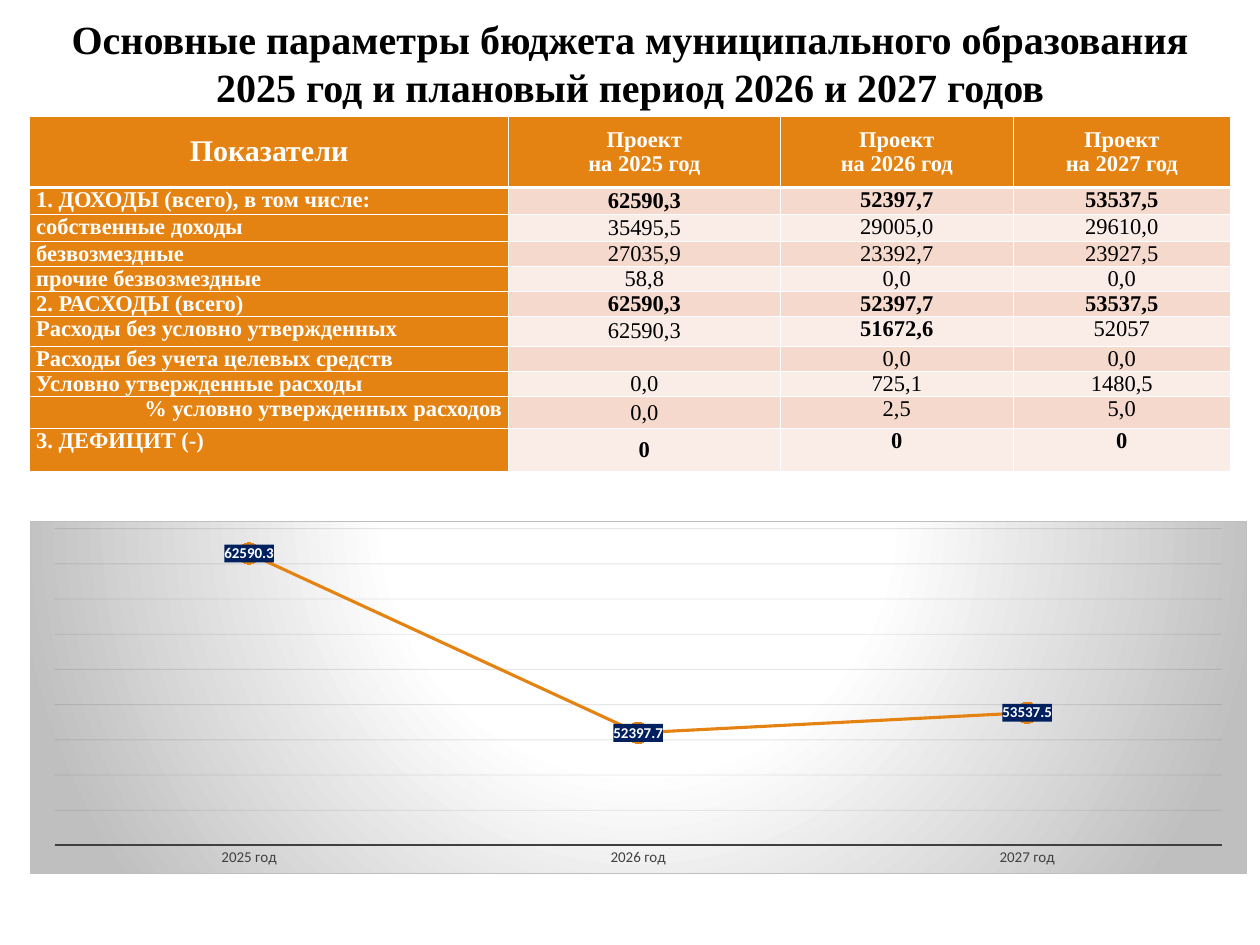
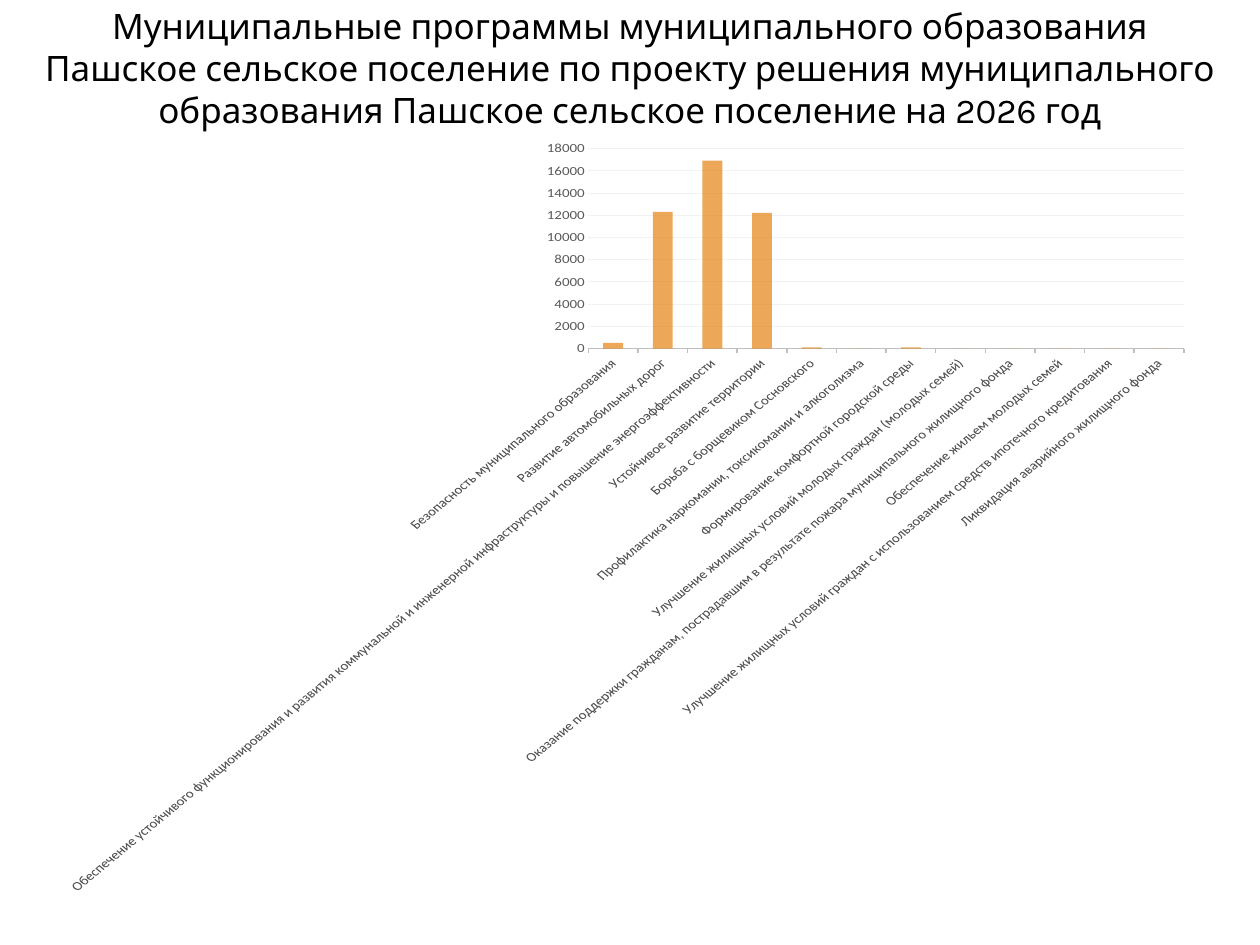
from pptx import Presentation
from pptx.chart.data import CategoryChartData
from pptx.dml.color import RGBColor
from pptx.enum.chart import XL_CHART_TYPE, XL_LABEL_POSITION, XL_MARKER_STYLE, XL_TICK_LABEL_POSITION, XL_TICK_MARK
from pptx.enum.text import MSO_ANCHOR, MSO_AUTO_SIZE, PP_ALIGN
from pptx.oxml import parse_xml
from pptx.oxml.ns import nsdecls, qn
from pptx.util import Cm, Pt

LEFT, CENTER, RIGHT = PP_ALIGN.LEFT, PP_ALIGN.CENTER, PP_ALIGN.RIGHT
TOP, MIDDLE = MSO_ANCHOR.TOP, MSO_ANCHOR.MIDDLE
GROW = MSO_AUTO_SIZE.SHAPE_TO_FIT_TEXT
LINE, COLUMN = XL_CHART_TYPE.LINE_MARKERS_STACKED, XL_CHART_TYPE.COLUMN_CLUSTERED
LABEL_CENTER, CIRCLE = XL_LABEL_POSITION.CENTER, XL_MARKER_STYLE.CIRCLE
NO_TICK, TICK_OUT = XL_TICK_MARK.NONE, XL_TICK_MARK.OUTSIDE
LABELS_LOW = XL_TICK_LABEL_POSITION.LOW

ORANGE, WHITE, BLACK, NAVY = "E48312", "FFFFFF", "000000", "002060"
BANDS = ("F5D9CC", "FAEDE7")
SERIF, CHART_FONT, TITLE_FONT = "Times New Roman", "Calibri", "Karla"

BUDGET_COLUMNS = (13.51, 7.67, 6.58, 6.12)
BUDGET_HEIGHTS = (2.01, 0.76, 0.76, 0.69, 0.69, 0.66, 0.86, 0.61, 0.69, 0.89, 1.22)
BUDGET_HEADER = ("Показатели", "Проект\nна 2025 год", "Проект\nна 2026 год", "Проект\nна 2027 год")
BUDGET_ROWS = (
    ("1. ДОХОДЫ (всего), в том числе:", "62590,3", "52397,7", "53537,5"),
    ("собственные доходы", "35495,5", "29005,0", "29610,0"),
    ("безвозмездные", "27035,9", "23392,7", "23927,5"),
    ("прочие безвозмездные", "58,8", "0,0", "0,0"),
    ("2. РАСХОДЫ (всего)", "62590,3", "52397,7", "53537,5"),
    ("Расходы без условно утвержденных", "62590,3", "51672,6", "52057"),
    ("Расходы без учета целевых средств", "", "0,0", "0,0"),
    ("Условно утвержденные расходы", "0,0", "725,1", "1480,5"),
    ("% условно утвержденных расходов", "0,0", "2,5", "5,0"),
    ("3. ДЕФИЦИТ (-)", "0", "0", "0"),
)
BOLD_VALUES = {(row, column) for row in (1, 5, 10) for column in (1, 2, 3)} | {(6, 2)}
INCOME = {"2025 год": 62590.3, "2026 год": 52397.7, "2027 год": 53537.5}
PROGRAMS = {
    "Безопасность муниципального образования": 500,
    "Развитие автомобильных дорог": 12300,
    "Обеспечение устойчивого функционирования и развития коммунальной и инженерной "
    "инфраструктуры и повышение энергоэффективности": 16900,
    "Устойчивое развитие территории": 12200,
    "Борьба с борщевиком Сосновского": 100,
    "Профилактика наркомании, токсикомании и алкоголизма": 0,
    "Формирование комфортной городской среды": 100,
    "Улучшение жилищных условий молодых граждан (молодых семей)": 0,
    "Оказание поддержки гражданам, пострадавшим в результате пожара муниципального жилищного фонда": 0,
    "Обеспечение жильем молодых семей": 0,
    "Улучшение жилищных условий граждан с использованием средств ипотечного кредитования": 0,
    "Ликвидация аварийного жилищного фонда": 0,
}


def rgb(color):
    """Turn a hex string into a colour."""
    return RGBColor.from_string(color)


def set_font(font, size, color, name, bold=False):
    """Apply the given look to a font."""
    font.size, font.name, font.bold = Pt(size), name, bold
    font.color.rgb = rgb(color)


def set_line(line, color, width):
    """Colour a line and set its width in points."""
    line.color.rgb = rgb(color)
    line.width = Pt(width)


def set_opacity(element, percent):
    """Make every colour inside an element partly transparent."""
    for color in element.iter(qn("a:srgbClr")):
        color.append(parse_xml(f'<a:alpha {nsdecls("a")} val="{percent * 1000}"/>'))


def chart_fill(content):
    """Return chart shape properties with the given drawing content."""
    return parse_xml(f'<c:spPr {nsdecls("c", "a")}>{content}</c:spPr>')


def solid(color):
    """Return the XML of a solid fill."""
    return f'<a:solidFill><a:srgbClr val="{color}"/></a:solidFill>'


class Deck:
    """Hold the presentation, its shared style and the current slide."""

    def __init__(self):
        """Start an empty presentation."""
        self.presentation = Presentation()
        self.presentation.slide_width, self.presentation.slide_height = Cm(35.56), Cm(26.67)
        self.slide = None

    def add_slide(self):
        """Add a blank slide and make it current."""
        self.slide = self.presentation.slides.add_slide(self.presentation.slide_layouts[6])

    def add_text(self, frame, text, size, color, name, bold=False, alignment=CENTER):
        """Put text run by run into the first paragraph of a frame."""
        paragraph = frame.paragraphs[0]
        paragraph.alignment = alignment
        set_font(paragraph.font, size, color, name, bold)
        for index, line in enumerate(text.split("\n")):
            if index:
                paragraph.add_line_break()
            run = paragraph.add_run()
            run.text = line
            set_font(run.font, size, color, name, bold)

    def title(self, box, text, size, name, bold=False):
        """Add a centred slide title."""
        frame = self.slide.shapes.add_textbox(*map(Cm, box)).text_frame
        frame.word_wrap, frame.auto_size = True, GROW
        self.add_text(frame, text, size, BLACK, name, bold)

    def cell(self, cell, text, fill, borders, anchor, **style):
        """Fill and frame one table cell and add its text."""
        cell.margin_left = cell.margin_right = Cm(0.18)
        cell.margin_top = cell.margin_bottom = 0
        cell.vertical_anchor = anchor
        properties = cell._tc.get_or_add_tcPr()
        for side, width in zip("LRTB", borders):
            properties.append(parse_xml(
                f'<a:ln{side} {nsdecls("a")} w="{Pt(width)}">{solid(WHITE)}</a:ln{side}>'))
        cell.fill.solid()
        cell.fill.fore_color.rgb = rgb(fill)
        self.add_text(cell.text_frame, text, name=SERIF, **style)

    def budget_table(self, box):
        """Add the table of budget figures."""
        rows = (BUDGET_HEADER,) + BUDGET_ROWS
        table = self.slide.shapes.add_table(len(rows), len(BUDGET_HEADER), *map(Cm, box)).table
        for column, width in zip(table.columns, BUDGET_COLUMNS):
            column.width = Cm(width)
        for row, height in zip(table.rows, BUDGET_HEIGHTS):
            row.height = Cm(height)
        for row, texts in enumerate(rows):
            borders = (1, 1, 3 if row == 1 else 1, 1 if row else 3)
            for column, text in enumerate(texts):
                heading = row == 0 or column == 0
                alignment = CENTER
                if row and column == 0:
                    alignment = RIGHT if text.startswith("%") else LEFT
                self.cell(
                    table.cell(row, column), text,
                    ORANGE if heading else BANDS[(row - 1) % 2], borders,
                    MIDDLE if row == 0 or column == 1 else TOP,
                    size=24 if row == column == 0 else 18,
                    color=WHITE if heading else BLACK,
                    bold=heading or (row, column) in BOLD_VALUES,
                    alignment=alignment)

    def chart(self, kind, box, values, axis_color, line_color, line_width, grid_color):
        """Add a chart with one series and the shared axis style."""
        data = CategoryChartData()
        data.categories = list(values)
        data.add_series("Series 1", list(values.values()))
        chart = self.slide.shapes.add_chart(kind, *map(Cm, box), data).chart
        chart.has_legend = chart.has_title = False
        set_font(chart.font, 10, BLACK, CHART_FONT)
        chart.plots[0].vary_by_categories = False
        category, value = chart.category_axis, chart.value_axis
        for axis in (category, value):
            set_font(axis.tick_labels.font, 12, axis_color, CHART_FONT)
            axis.major_tick_mark, axis.minor_tick_mark = TICK_OUT, NO_TICK
        set_line(category.format.line, line_color, line_width)
        value.format.line.fill.background()
        value.has_major_gridlines = True
        set_line(value.major_gridlines.format.line, grid_color, 0.75)
        return chart

    def plot_area(self, chart, x, y, width, height):
        """Place the inner plot area by fractions of the chart."""
        area = chart._chartSpace.chart.plotArea
        for layout in area.findall(qn("c:layout")):
            area.remove(layout)
        places = "".join(f'<c:{tag} val="{number}"/>' for tag, number in
                         (("x", x), ("y", y), ("w", width), ("h", height)))
        area.insert(0, parse_xml(
            f'<c:layout {nsdecls("c")}><c:manualLayout><c:layoutTarget val="inner"/>'
            f'<c:xMode val="edge"/><c:yMode val="edge"/>{places}</c:manualLayout></c:layout>'))

    def income_chart(self, box):
        """Add the line chart of yearly income on a shaded ground."""
        chart = self.chart(LINE, box, INCOME, "404040", "404040", 1.5, "0D0D0D")
        self.plot_area(chart, 0.02, 0.02, 0.96, 0.9)
        chart.category_axis.major_tick_mark = NO_TICK
        axis = chart.value_axis
        axis.visible = False
        axis.minimum_scale, axis.maximum_scale, axis.major_unit = 46000, 64000, 2000
        for grid in chart._chartSpace.iter(qn("c:majorGridlines")):
            set_opacity(grid, 10)
        stops = "".join(f'<a:gs pos="{place * 1000}"><a:srgbClr val="{color}"/></a:gs>'
                        for place, color in ((0, WHITE), (39, WHITE), (100, "BFBFBF")))
        chart._chartSpace.chart.addnext(chart_fill(
            f'<a:gradFill><a:gsLst>{stops}</a:gsLst><a:path path="circle">'
            '<a:fillToRect l="50000" t="-80000" r="50000" b="180000"/></a:path></a:gradFill>'
            f'<a:ln w="{Pt(0.75)}">{solid("BFBFBF")}</a:ln>'))
        series = chart.plots[0].series[0]
        series.smooth = False
        set_line(series.format.line, ORANGE, 2.5)
        marker = series.marker
        marker.style, marker.size = CIRCLE, 17
        marker.format.fill.solid()
        marker.format.fill.fore_color.rgb = rgb(ORANGE)
        marker.format.line.fill.background()
        labels = series.data_labels
        labels.show_value, labels.position = True, LABEL_CENTER
        set_font(labels.font, 12, WHITE, CHART_FONT, True)
        labels._element.find(qn("c:txPr")).addprevious(chart_fill(solid(NAVY)))

    def programs_chart(self, box):
        """Add the column chart of municipal programmes."""
        chart = self.chart(COLUMN, box, PROGRAMS, "595959", "BFBFBF", 1.25, "F2F2F2")
        chart.category_axis.tick_label_position = LABELS_LOW
        chart.value_axis.major_tick_mark = NO_TICK
        plot = chart.plots[0]
        plot.gap_width = 150
        series = plot.series[0]
        series.format.fill.solid()
        series.format.fill.fore_color.rgb = rgb(ORANGE)
        set_opacity(series._element, 70)


def main():
    """Build both slides and save them."""
    deck = Deck()
    deck.add_slide()
    deck.budget_table((0.84, 3.28, 33.88, 10.31))
    deck.title((1.68, 0.28, 32.23, 3),
               "Основные параметры бюджета муниципального образования "
               "2025 год и плановый период 2026 и 2027 годов", 32, SERIF, True)
    deck.income_chart((0.84, 14.71, 34.34, 9.96))
    deck.add_slide()
    deck.title((0.91, 0, 33.73, 3.84),
               "Муниципальные программы муниципального образования Пашское сельское поселение "
               "по проекту решения муниципального образования Пашское сельское поселение "
               "на 2026 год", 28, TITLE_FONT)
    deck.programs_chart((1.9, 3.84, 32.74, 21.39))
    deck.presentation.save("out.pptx")


if __name__ == "__main__":
    main()
